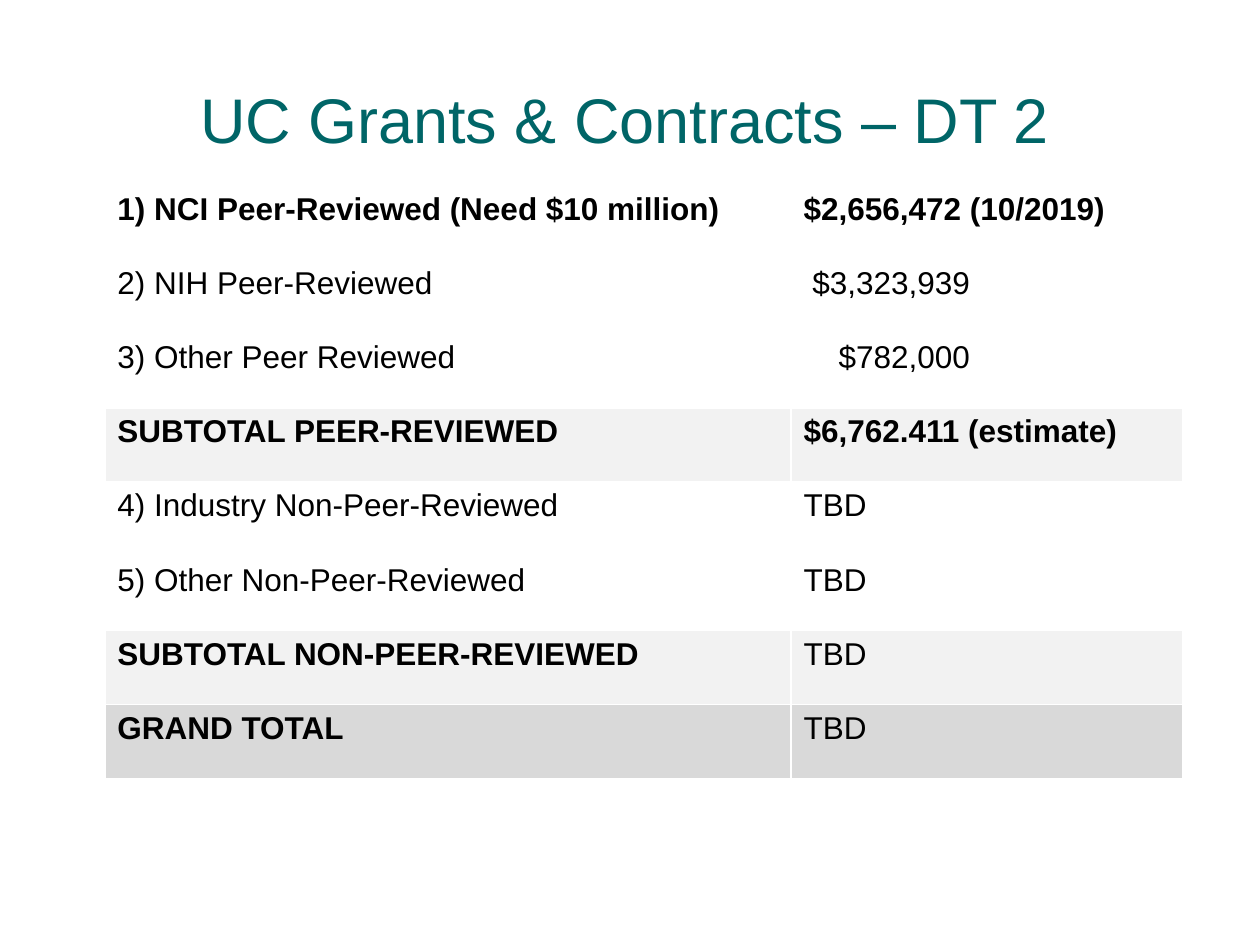
import pptx
import pptx.dml.color
import pptx.enum.text
import pptx.oxml.ns
import pptx.util
from dataclasses import dataclass
from lxml import etree

Pt = pptx.util.Pt
RGB = pptx.dml.color.RGBColor.from_string


@dataclass
class Theme:
    face: str = "Arial"
    head: float = 36
    body: float = 18
    teal: str = "006567"
    ink: str = "000000"
    rule: str = "FFFFFF"
    sub: str = "F2F2F2"
    total: str = "D9D9D9"


theme = Theme()


def write(para, text, size, color, bold=False):
    run = para.add_run()
    run.text = text
    run.font.name = theme.face
    run.font.size = Pt(size)
    run.font.bold = bold
    run.font.color.rgb = RGB(color)


def edge(cell, side, width):
    """Draw one border of a cell; side is L, R, T or B."""
    line = etree.SubElement(cell._tc.get_or_add_tcPr(),
                            pptx.oxml.ns.qn(f"a:ln{side}"), w=str(Pt(width)))
    fill = etree.SubElement(line, pptx.oxml.ns.qn("a:solidFill"))
    etree.SubElement(fill, pptx.oxml.ns.qn("a:srgbClr"), val=theme.rule)


deck = pptx.Presentation()
deck.slide_width, deck.slide_height = Pt(720), Pt(540)
slide = deck.slides.add_slide(deck.slide_layouts[6])

# Title
title = slide.shapes.add_textbox(Pt(10.8), Pt(33.84), Pt(692.64), Pt(67.68))
frame = title.text_frame
frame.word_wrap = True
frame.vertical_anchor = pptx.enum.text.MSO_ANCHOR.MIDDLE
para = frame.paragraphs[0]
para.alignment = pptx.enum.text.PP_ALIGN.CENTER
write(para, "UC Grants & Contracts – DT 2", theme.head, theme.teal)

# Grants table: label, label bold, amount, amount bold, amount indent, fill
rows = [
    ("1) NCI Peer-Reviewed (Need $10 million)", True,
     "$2,656,472 (10/2019)", True, 0, None),
    ("2) NIH Peer-Reviewed", False, "$3,323,939", False, 5, None),
    ("3) Other Peer Reviewed", False, "$782,000", False, 20, None),
    ("SUBTOTAL PEER-REVIEWED", True,
     "$6,762.411 (estimate)", True, 0, theme.sub),
    ("4) Industry Non-Peer-Reviewed", False, "TBD", False, 0, None),
    ("5) Other Non-Peer-Reviewed", False, "TBD", False, 0, None),
    ("SUBTOTAL NON-PEER-REVIEWED", True, "TBD", False, 0, theme.sub),
    ("GRAND TOTAL", True, "TBD", False, 0, theme.total),
]
wide = (392.1, 223.9)
high = 42.4
table = slide.shapes.add_table(len(rows), len(wide), Pt(59.9), Pt(105.9),
                               Pt(sum(wide)), Pt(high * len(rows))).table
table.horz_banding = False
for col, width in zip(table.columns, wide):
    col.width = Pt(width)

for r, (label, strong, amount, heavy, indent, shade) in enumerate(rows):
    table.rows[r].height = Pt(high)
    for c, (text, bold, shift) in enumerate([(label, strong, 0),
                                             (amount, heavy, indent)]):
        cell = table.cell(r, c)
        cell.margin_left = Pt(7.2 + shift)
        for side in "LRTB":
            edge(cell, side, 3 if r == 0 and side == "B" else 1)
        if shade:
            cell.fill.solid()
            cell.fill.fore_color.rgb = RGB(shade)
        else:
            cell.fill.background()
        write(cell.text_frame.paragraphs[0], text, theme.body, theme.ink, bold)

deck.save("out.pptx")
